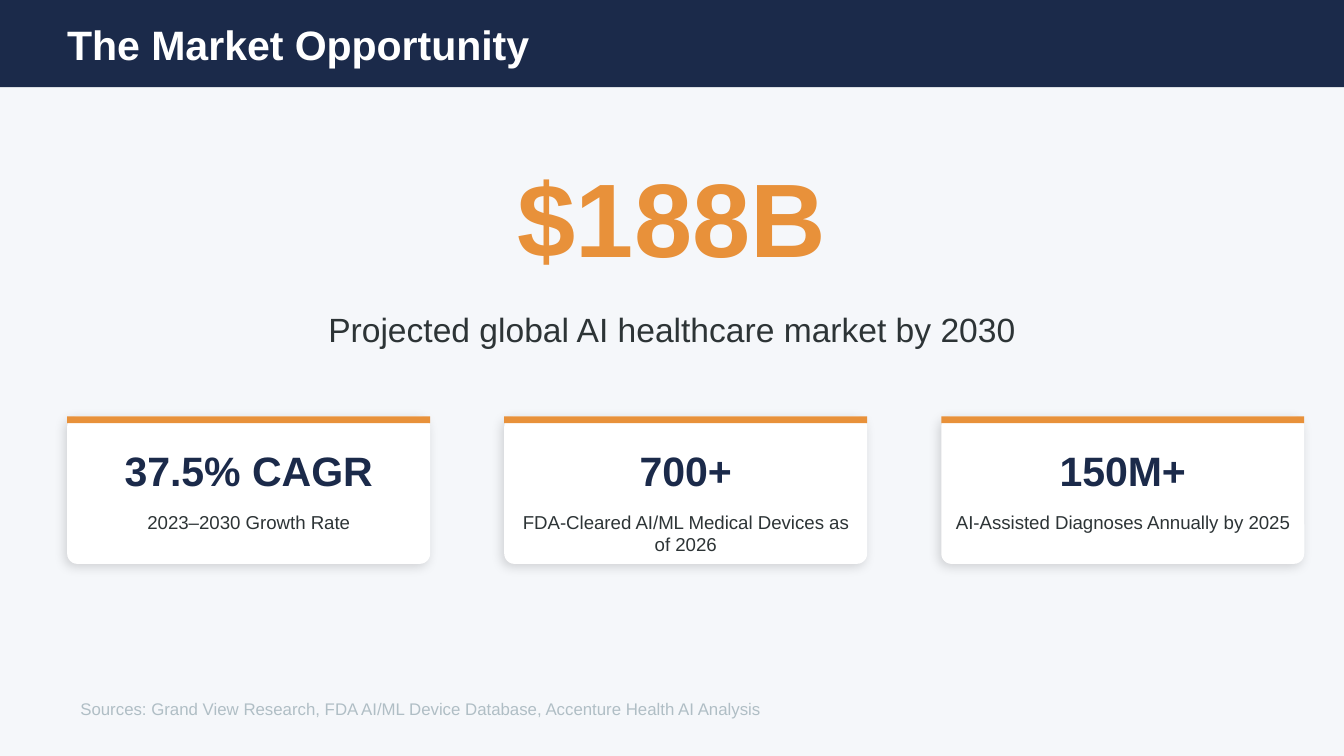
from lxml import etree
from pptx import Presentation
from pptx.dml.color import RGBColor
from pptx.enum.shapes import MSO_SHAPE
from pptx.enum.text import MSO_ANCHOR, MSO_AUTO_SIZE, PP_ALIGN
from pptx.oxml import parse_xml
from pptx.util import Cm, Pt

COLORS = {
    "navy": "1B2A4A",
    "orange": "E8913A",
    "ink": "2D3436",
    "muted": "B0BEC5",
    "white": "FFFFFF",
    "background": "F5F7FA",
}
CARD_SHADOW = (
    '<a:effectLst xmlns:a="http://schemas.openxmlformats.org/drawingml/2006/main">'
    '<a:outerShdw blurRad="76200" dist="25400" dir="8100000" algn="bl" rotWithShape="0">'
    '<a:srgbClr val="000000"><a:alpha val="15000"/></a:srgbClr>'
    "</a:outerShdw></a:effectLst>"
)


def write(holder, text, size, color, bold=False, align=PP_ALIGN.CENTER,
          anchor=MSO_ANCHOR.MIDDLE, inset=True):
    frame = holder.text_frame
    frame.word_wrap = True
    frame.auto_size = MSO_AUTO_SIZE.NONE
    frame.vertical_anchor = anchor
    if not inset:
        frame.margin_left = frame.margin_right = 0
        frame.margin_top = frame.margin_bottom = 0
    paragraph = frame.paragraphs[0]
    paragraph.text = text
    paragraph.alignment = align
    paragraph.font.name = "Arial"
    paragraph.font.size = Pt(size)
    paragraph.font.bold = bold
    paragraph.font.color.rgb = RGBColor.from_string(COLORS[color])


def add_block(kind, left, top, width, height, color):
    block = slide.shapes.add_shape(kind, left, top, width, height)
    block.shadow.inherit = False
    block.fill.solid()
    block.fill.fore_color.rgb = RGBColor.from_string(COLORS[color])
    block.line.fill.background()
    return block


prs = Presentation()
prs.slide_width, prs.slide_height = Cm(25.4), Cm(14.29)
slide = prs.slides.add_slide(prs.slide_layouts[5])
slide.background.fill.solid()
slide.background.fill.fore_color.rgb = RGBColor.from_string(COLORS["background"])

# Header band, placed behind the title
header = add_block(MSO_SHAPE.RECTANGLE, 0, 0, prs.slide_width, Cm(1.65), "navy")
title = slide.shapes.title
title._element.addprevious(header._element)
title.left, title.top, title.width, title.height = Cm(1.27), 0, Cm(22.86), Cm(1.65)
write(title, "The Market Opportunity", 22, "white", bold=True,
      align=PP_ALIGN.LEFT, inset=False)

# Headline figure and its caption
market_size = slide.shapes.add_textbox(Cm(3.81), Cm(2.29), Cm(17.78), Cm(3.56))
write(market_size, "$188B", 56, "orange", bold=True, inset=False)
market_caption = slide.shapes.add_textbox(Cm(3.81), Cm(5.59), Cm(17.78), Cm(1.27))
write(market_caption, "Projected global AI healthcare market by 2030", 18, "ink")

# Three statistic cards
stats = [
    ("37.5% CAGR", "2023–2030 Growth Rate"),
    ("700+", "FDA-Cleared AI/ML Medical Devices as of 2026"),
    ("150M+", "AI-Assisted Diagnoses Annually by 2025"),
]
card_top, card_width, card_pitch = Cm(7.87), Cm(6.86), Cm(8.26)
for index, (figure, label) in enumerate(stats):
    left = Cm(1.27) + index * card_pitch

    card = add_block(MSO_SHAPE.ROUNDED_RECTANGLE, left, card_top, card_width, Cm(2.79), "white")
    card.adjustments[0] = 0.07
    properties = card._element.spPr
    properties.replace(properties.find("{*}effectLst"), parse_xml(CARD_SHADOW))

    add_block(MSO_SHAPE.RECTANGLE, left, card_top, card_width, Cm(0.13), "orange")

    figure_box = slide.shapes.add_textbox(left, Cm(8.26), card_width, Cm(1.27))
    write(figure_box, figure, 22, "navy", bold=True, inset=False)
    label_box = slide.shapes.add_textbox(left, Cm(9.53), card_width, Cm(0.89))
    write(label_box, label, 10, "ink", anchor=MSO_ANCHOR.TOP)

# Sources
sources = slide.shapes.add_textbox(Cm(1.27), Cm(13.08), Cm(22.86), Cm(0.89))
write(sources, "Sources: Grand View Research, FDA AI/ML Device Database, "
      "Accenture Health AI Analysis", 9, "muted", align=PP_ALIGN.LEFT, anchor=MSO_ANCHOR.TOP)

prs.save("out.pptx")
